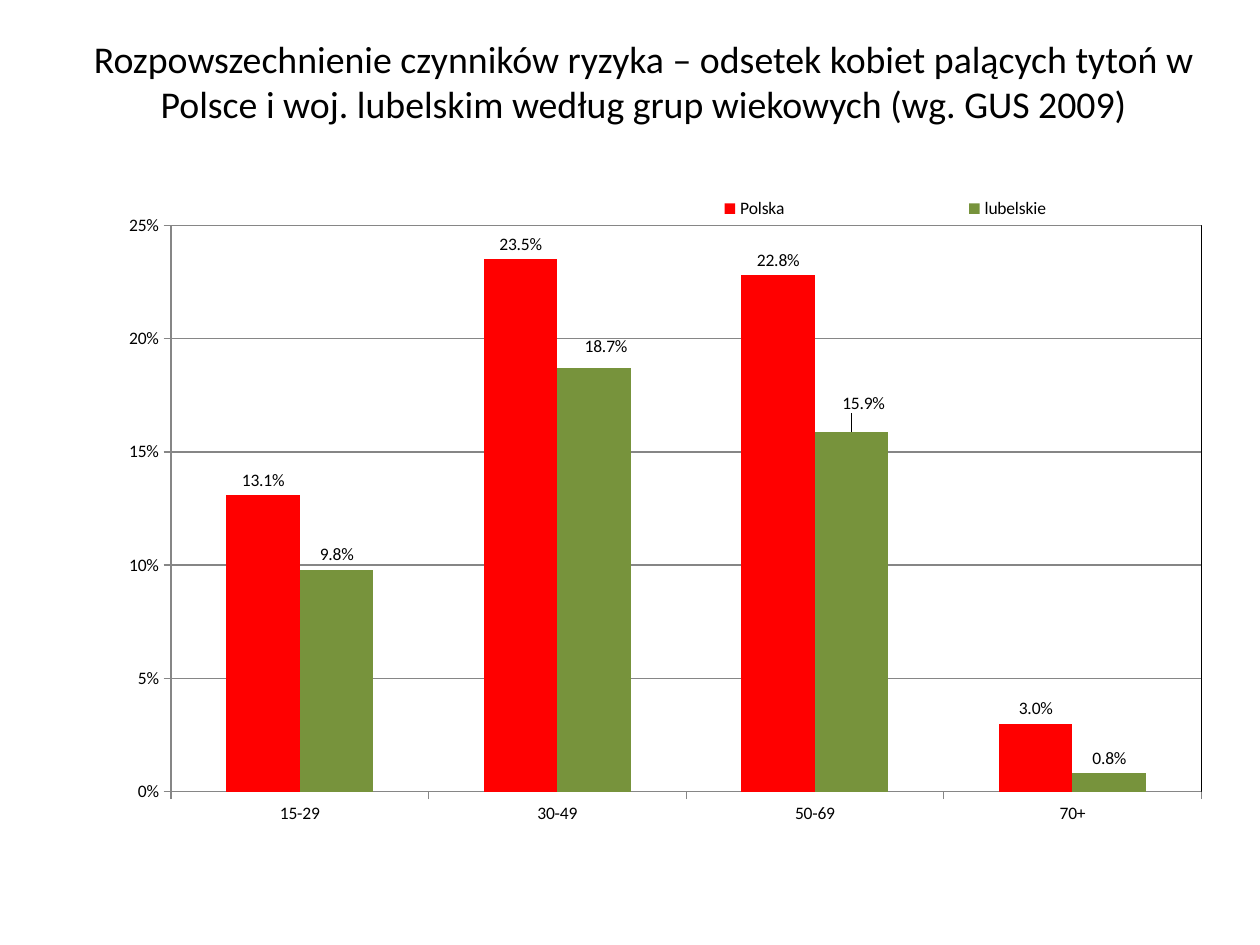
from lxml import etree
from pptx import Presentation
from pptx.chart.data import CategoryChartData
from pptx.dml.color import RGBColor
from pptx.enum.chart import XL_CHART_TYPE, XL_LABEL_POSITION, XL_LEGEND_POSITION, XL_TICK_MARK
from pptx.enum.text import MSO_ANCHOR, PP_ALIGN
from pptx.oxml import parse_xml
from pptx.oxml.ns import nsdecls, qn
from pptx.util import Cm, Pt

CLUSTERED = XL_CHART_TYPE.COLUMN_CLUSTERED
OUTSIDE_END = XL_LABEL_POSITION.OUTSIDE_END
LEGEND_RIGHT = XL_LEGEND_POSITION.RIGHT
TICK_OUT = XL_TICK_MARK.OUTSIDE
MIDDLE, CENTER = MSO_ANCHOR.MIDDLE, PP_ALIGN.CENTER

BLACK = RGBColor(0x00, 0x00, 0x00)
GRAY = RGBColor(0x86, 0x86, 0x86)
RED = RGBColor(0xFF, 0x00, 0x00)
GREEN = RGBColor(0x77, 0x93, 0x3C)
FONT = "Calibri"


def manual_layout(**settings):
    """Build a c:layout element from manual layout settings."""
    layout = parse_xml(f"<c:layout {nsdecls('c')}/>")
    manual = etree.SubElement(layout, qn("c:manualLayout"))
    for name, value in settings.items():
        etree.SubElement(manual, qn(f"c:{name}")).set("val", str(value))
    return layout


prs = Presentation()
prs.slide_width, prs.slide_height = Cm(25.4), Cm(19.05)
s = prs.slides.add_slide(prs.slide_layouts[6])

# Title
sp = s.shapes.add_textbox(Cm(1.27), Cm(0.76), Cm(23.42), Cm(1.75))
tf = sp.text_frame
tf.word_wrap = True
tf.vertical_anchor = MIDDLE
p = tf.paragraphs[0]
p.text = ("Rozpowszechnienie czynników ryzyka – odsetek kobiet palących tytoń "
          "w Polsce i woj. lubelskim według grup wiekowych (wg. GUS 2009)")
p.alignment = CENTER
p.font.name, p.font.size, p.font.color.rgb = FONT, Pt(21.6), BLACK

# Chart data
data = CategoryChartData(number_format="0.0%")
data.categories = ["15-29", "30-49", "50-69", "70+"]
data.add_series("Polska", [0.131, 0.235, 0.228, 0.03])
data.add_series("lubelskie", [0.098, 0.187, 0.159, 0.008])
chart = s.shapes.add_chart(CLUSTERED, Cm(1.09), Cm(3.73), Cm(23.6), Cm(13.59), data).chart
chart.has_title = False
chart.font.name, chart.font.size, chart.font.color.rgb = FONT, Pt(10), BLACK

# Columns and value labels
plot = chart.plots[0]
plot.gap_width, plot.overlap = 150, 0
plot.vary_by_categories = False
for series, color in zip(plot.series, (RED, GREEN)):
    series.format.fill.solid()
    series.format.fill.fore_color.rgb = color
    labels = series.data_labels
    labels.show_value = True
    labels.number_format, labels.number_format_is_linked = "0.0%", False
    labels.position = OUTSIDE_END

# Two labels moved up and to the right
lubelskie = plot.series[1]
for index, x, y in ((1, 0.01, -0.01), (2, 0.01, -0.02)):
    lubelskie.points[index].data_label.position = OUTSIDE_END
    label = lubelskie.data_labels._element.findall(qn("c:dLbl"))[-1]
    label.insert(1, manual_layout(x=x, y=y))
    label.insert(2, parse_xml(
        f'<c:numFmt {nsdecls("c")} formatCode="0.0%" sourceLinked="0"/>'))

# Axes and gridlines
value_axis, category_axis = chart.value_axis, chart.category_axis
value_axis.minimum_scale, value_axis.maximum_scale = 0, 0.25
value_axis.major_unit = 0.05
value_axis.tick_labels.number_format = "0%"
value_axis.tick_labels.number_format_is_linked = False
value_axis.has_major_gridlines = True
for axis in (value_axis, category_axis):
    axis.major_tick_mark = TICK_OUT
for part in (value_axis, category_axis, value_axis.major_gridlines):
    part.format.line.color.rgb = GRAY
    part.format.line.width = Pt(0.75)

# Plot area place and border
area = chart._chartSpace.chart.plotArea
for old in area.findall(qn("c:layout")):
    area.remove(old)
area.insert(0, manual_layout(layoutTarget="inner", xMode="edge", yMode="edge",
                             x=0.1, y=0.06, w=0.88, h=0.84))
area.append(parse_xml(
    f'<c:spPr {nsdecls("c", "a")}><a:noFill/><a:ln w="9525"><a:solidFill>'
    f'<a:srgbClr val="{BLACK}"/></a:solidFill></a:ln></c:spPr>'))

# Legend in a row above the columns
chart.has_legend = True
legend = chart.legend
legend.position = LEGEND_RIGHT
legend.include_in_layout = False
element = legend._element
for old in element.findall(qn("c:layout")):
    element.remove(old)
element.find(qn("c:legendPos")).addnext(
    manual_layout(xMode="edge", yMode="edge", x=0.42, y=0.01, w=0.58, h=0.05))

prs.save("out.pptx")
